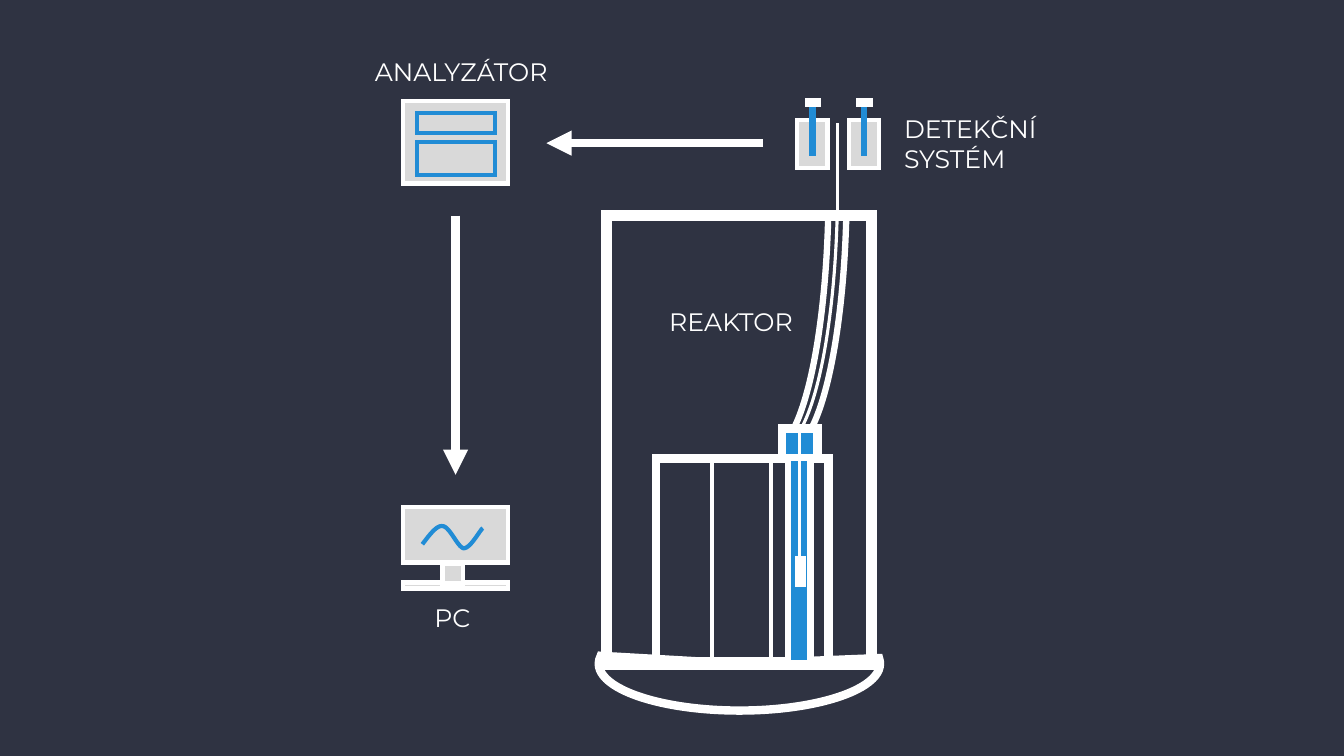
import dataclasses

import lxml.etree
import pptx
import pptx.dml.color
import pptx.enum.shapes
import pptx.oxml.ns
import pptx.util

SHAPE = pptx.enum.shapes.MSO_SHAPE
CELLS_PER_INCH = 10  # the grid has ten columns and ten rows to the inch


@dataclasses.dataclass(frozen=True)
class Theme:
    background: str = "2F3342"
    white: str = "FFFFFF"
    blue: str = "218CD5"
    grey: str = "D9D9D9"
    font: str = "Montserrat"
    label_size: float = 18
    hair: float = 1
    cable: float = 2.25
    thin: float = 3
    tube: float = 4.5
    wall: float = 6
    vessel: float = 8


THEME = Theme()


def rgb(colour):
    return pptx.dml.color.RGBColor.from_string(colour)


def cells(*counts):
    """Turn grid cells into slide lengths."""
    return [pptx.util.Inches(n / CELLS_PER_INCH) for n in counts]


def add_line_part(s, tag, **attributes):
    ln = s.line._get_or_add_ln()
    lxml.etree.SubElement(ln, pptx.oxml.ns.qn(tag), attributes)


def style_line(s, colour, width):
    s.line.color.rgb = rgb(colour)
    s.line.width = pptx.util.Pt(width)
    add_line_part(s, "a:miter", lim="800000")


def style_shape(s, line, width, fill=None):
    s.shadow.inherit = False
    if fill:
        s.fill.solid()
        s.fill.fore_color.rgb = rgb(fill)
    else:
        s.fill.background()
    style_line(s, line, width)


def outline(slide, box, width, fill=None, line=THEME.white, kind=SHAPE.RECTANGLE, angles=()):
    """Draw a preset shape; angles are the start and end of an arc or pie."""
    s = slide.shapes.add_shape(kind, *cells(*box))
    for i, angle in enumerate(angles):
        s.adjustments[i] = angle
    style_shape(s, line, width, fill)


def segment(slide, ends, width, colour=THEME.white, arrow=False):
    s = slide.shapes.add_connector(pptx.enum.shapes.MSO_CONNECTOR.STRAIGHT, *cells(*ends))
    style_line(s, colour, width)
    if arrow:
        add_line_part(s, "a:tailEnd", type="triangle")
    lxml.etree.SubElement(s._element.spPr, pptx.oxml.ns.qn("a:effectLst"))


def label(slide, box, text):
    s = slide.shapes.add_textbox(*cells(*box))
    tf = s.text_frame
    tf.word_wrap = True
    r = tf.paragraphs[0].add_run()
    r.text = text
    r.font.name = THEME.font
    r.font.size = pptx.util.Pt(THEME.label_size)
    r.font.color.rgb = rgb(THEME.white)


def bezier(points, steps=16):
    """Sample a chain of cubic curves that share their end points."""
    samples = [points[0]]
    for start in range(0, len(points) - 1, 3):
        a, b, c, d = points[start:start + 4]
        for step in range(1, steps + 1):
            t = step / steps
            u = 1 - t
            samples.append(tuple(
                u**3 * p + 3 * u * u * t * q + 3 * u * t * t * v + t**3 * w
                for p, q, v, w in zip(a, b, c, d)))
    return samples


def wave(slide, points):
    samples = [cells(*point) for point in bezier(points)]
    builder = slide.shapes.build_freeform(*samples[0])
    builder.add_line_segments(samples[1:], close=False)
    style_shape(builder.convert_to_shape(), THEME.blue, THEME.thin)


def reactor(slide):
    outline(slide, (60.2, 21.4, 26.3, 44.5), THEME.vessel)
    outline(slide, (59.4, 61.2, 27.9, 9.3), THEME.wall, kind=SHAPE.PIE, angles=(214.62, 109.96))
    outline(slide, (65.1, 45.5, 17.1, 20.1), THEME.wall)
    for x in (70.6, 76.5):
        segment(slide, (x, 45.5, x, 65.6), THEME.thin)


def probe(slide):
    outline(slide, (77.6, 42.5, 3.5, 3), THEME.wall, THEME.blue)
    outline(slide, (78.2, 45.4, 2.2, 20.4), THEME.tube, THEME.blue)
    outline(slide, (78.9, 55.2, 1, 3), THEME.hair, THEME.white)
    segment(slide, (79.3, 42.5, 79.3, 58.2), THEME.cable)
    for x, y, width in ((70.7, -7.6, THEME.tube), (72.5, -7.7, THEME.tube), (71.6, -7.9, THEME.cable)):
        outline(slide, (x, y, 11.5, 52.3), width, kind=SHAPE.ARC, angles=(15.4, 50.7))
    segment(slide, (83.1, 21.4, 83.1, 12.2), THEME.cable)


def detector(slide, x):
    outline(slide, (x, 11.9, 3, 4.8), THEME.thin, THEME.grey)
    segment(slide, (x + 1.5, 10.6, x + 1.5, 15.5), THEME.tube, THEME.blue)
    outline(slide, (x + 0.8, 9.8, 1.5, 0.8), THEME.hair, THEME.white)


def analyser(slide):
    outline(slide, (40, 10, 10.4, 8.2), THEME.thin, THEME.grey)
    for y, height in ((11.2, 2), (14.1, 3.3)):
        outline(slide, (41.4, y, 7.7, height), THEME.thin, THEME.grey, THEME.blue)


def computer(slide):
    base, screen, stand = (40, 57.8, 10.4, 0.6), (40, 50.3, 10.4, 5.5), (43.9, 55.9, 2, 2)
    for box in (base, screen, stand):
        outline(slide, box, THEME.thin, THEME.grey)
    wave(slide, [(41.9, 54), (42.6, 53.1), (43.3, 52.1), (43.9, 52.2), (44.6, 52.2),
                 (45.4, 54.3), (46, 54.4), (46.7, 54.4), (47.6, 52.6), (47.9, 52.4)])


def main():
    prs = pptx.Presentation()
    prs.slide_width, prs.slide_height = cells(133.33, 75)
    slide = prs.slides.add_slide(prs.slide_layouts[6])
    slide.background.fill.solid()
    slide.background.fill.fore_color.rgb = rgb(THEME.background)

    reactor(slide)
    probe(slide)
    analyser(slide)
    computer(slide)
    for x in (79.1, 84.2):
        detector(slide, x)
    for ends in ((75.7, 14.2, 54.2, 14.2), (45.2, 21.4, 45.2, 47.1)):
        segment(slide, ends, THEME.wall, arrow=True)

    label(slide, (36.2, 5.1, 25.7, 4), "ANALYZÁTOR")
    label(slide, (88.7, 10.7, 25.7, 7.1), "DETEKČNÍ SYSTÉM")
    label(slide, (42.1, 59.3, 6.9, 4), "PC")
    label(slide, (65.4, 29.9, 25.7, 4), "REAKTOR")
    prs.save("out.pptx")


if __name__ == "__main__":
    main()
